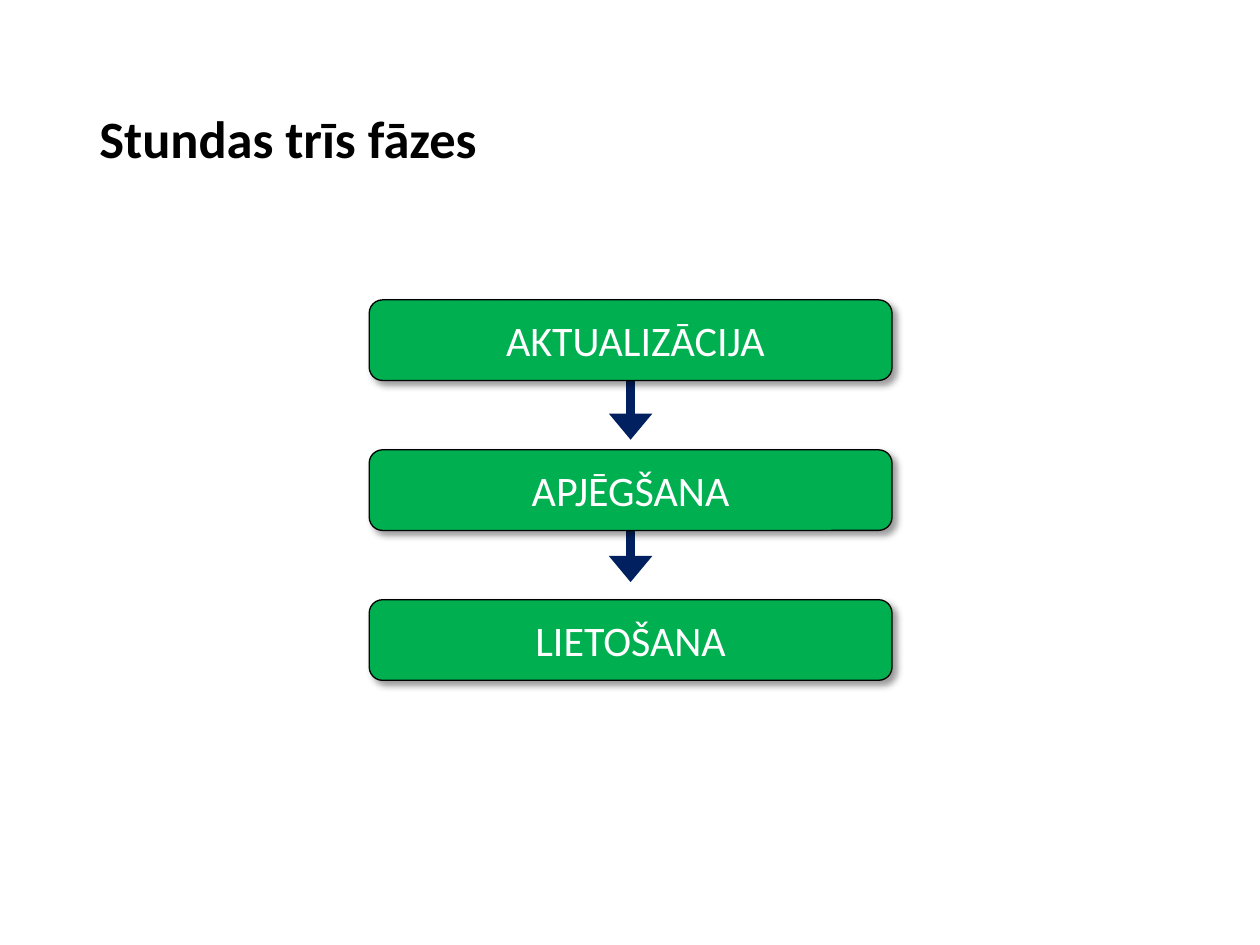
import pptx
import pptx.util
import pptx.dml.color
import pptx.enum.shapes
import pptx.enum.text
import pptx.oxml
import pptx.oxml.ns

Inches = pptx.util.Inches
Pt = pptx.util.Pt
SHADOW = (
    '<a:effectLst %s><a:outerShdw blurRad="50800" dist="38100" dir="2700000" '
    'algn="tl" rotWithShape="0"><a:srgbClr val="000000"><a:alpha val="40000"/>'
    '</a:srgbClr></a:outerShdw></a:effectLst>' % pptx.oxml.ns.nsdecls("a")
)


def paint(target, color):
    target.solid()
    target.fore_color.rgb = pptx.dml.color.RGBColor.from_string(color)


def write(shape, text, size, color, bold=False):
    frame = shape.text_frame
    frame.word_wrap = True
    frame.vertical_anchor = pptx.enum.text.MSO_ANCHOR.MIDDLE
    para = frame.paragraphs[0]
    para.text = text
    font = para.font
    font.name, font.size, font.bold = "Calibri", Pt(size), bold
    paint(font.fill, color)
    return para


def add_title(slide, left, top, width, height):
    box = slide.shapes.add_textbox(
        Inches(left), Inches(top), Inches(width), Inches(height))
    para = write(box, "Stundas trīs fāzes", 30, "000000", True)
    para.line_spacing = 0.9


def add_arrow(slide, x, top, length):
    arrow = slide.shapes.add_connector(
        pptx.enum.shapes.MSO_CONNECTOR.STRAIGHT,
        Inches(x), Inches(top), Inches(x), Inches(top + length))
    arrow.line.width = Pt(5)
    paint(arrow.line.fill, "002060")
    props = arrow._element.spPr
    props.get_or_add_ln().append(pptx.oxml.parse_xml(
        '<a:tailEnd %s type="triangle" w="lg" len="med"/>' % pptx.oxml.ns.nsdecls("a")))
    props.append(pptx.oxml.parse_xml(
        "<a:effectLst %s/>" % pptx.oxml.ns.nsdecls("a")))


def add_phase(slide, text, left, top, width, height):
    box = slide.shapes.add_shape(
        pptx.enum.shapes.MSO_SHAPE.ROUNDED_RECTANGLE,
        Inches(left), Inches(top), Inches(width), Inches(height))
    paint(box.fill, "00B050")
    box.line.width = Pt(0.75)
    paint(box.line.fill, "000000")
    box._element.spPr.append(pptx.oxml.parse_xml(SHADOW))
    para = write(box, text, 24, "FFFFFF")
    para.alignment = pptx.enum.text.PP_ALIGN.CENTER


def add_flow(slide, left, top, width, height):
    names = (" AKTUALIZĀCIJA", "APJĒGŠANA", "LIETOŠANA")
    deep = 0.64
    pitch = (height - deep) / (len(names) - 1)
    for start in (0.6, 1.73):
        add_arrow(slide, left + width / 2, top + start, 0.51)
    for row, name in enumerate(names):
        add_phase(slide, name, left, top + row * pitch, width, deep)


def main():
    deck = pptx.Presentation()
    deck.slide_width, deck.slide_height = Inches(10), Inches(7.5)
    slide = deck.slides.add_slide(deck.slide_layouts[6])
    add_title(slide, 0.69, 0.4, 8.62, 1.45)
    add_flow(slide, 2.93, 2.38, 4.15, 3.02)
    deck.save("out.pptx")


if __name__ == "__main__":
    main()
